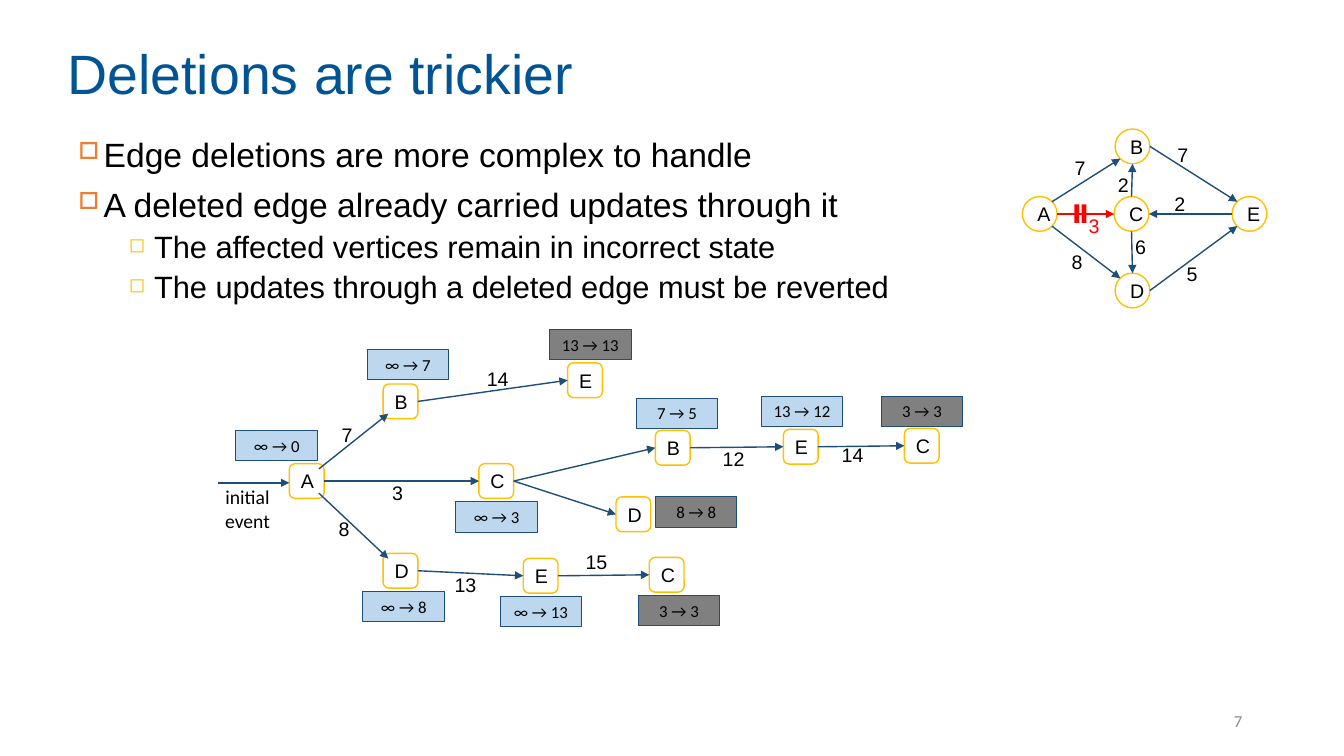
"""Build the slide on edge deletions with its update tree and example graph."""
from lxml.etree import SubElement
from pptx import Presentation
from pptx.dml.color import RGBColor
from pptx.enum.shapes import MSO_CONNECTOR, MSO_SHAPE
from pptx.enum.text import MSO_ANCHOR, MSO_AUTO_SIZE, PP_ALIGN
from pptx.oxml.ns import qn
from pptx.util import Inches, Pt

TITLE_BLUE = RGBColor(0x00, 0x54, 0x93)
NAVY = RGBColor(0x1F, 0x4E, 0x79)
PALE_BLUE = RGBColor(0xBD, 0xD7, 0xEE)
GOLD = RGBColor(0xFF, 0xC0, 0x00)
ORANGE = RGBColor(0xED, 0x7D, 0x31)
RED = RGBColor(0xFF, 0x00, 0x00)
GREY = RGBColor(0x80, 0x80, 0x80)
PAGE_GREY = RGBColor(0x8C, 0x8C, 0x8C)
BLACK = RGBColor(0x00, 0x00, 0x00)
WHITE = RGBColor(0xFF, 0xFF, 0xFF)

prs = Presentation()
prs.slide_width, prs.slide_height = Inches(13.33), Inches(7.5)
COL, ROW = prs.slide_width / 1333, prs.slide_height / 750
NODE = 34.5
s = prs.slides.add_slide(prs.slide_layouts[5])


def put(text, col, row, cols, rows, shape=None, sp=None, fill=None, line=None, weight=1,
        size=14, font="Arial", color=BLACK, align=PP_ALIGN.LEFT, anchor=MSO_ANCHOR.TOP):
    """Place text in a box, shape or placeholder on the grid."""
    box = [round(v) for v in (col * COL, row * ROW, cols * COL, rows * ROW)]
    if sp is not None:
        sp.left, sp.top, sp.width, sp.height = box
    elif shape is None:
        sp = s.shapes.add_textbox(*box)
    else:
        sp = s.shapes.add_shape(shape, *box)
        sp.shadow.inherit = False
        sp.fill.solid()
        sp.fill.fore_color.rgb = fill
        if line is None:
            sp.line.fill.background()
        else:
            sp.line.color.rgb = line
            sp.line.width = Pt(weight)
    tf = sp.text_frame
    tf.word_wrap = True
    tf.auto_size = MSO_AUTO_SIZE.NONE
    tf.vertical_anchor = anchor
    tf.text = text
    for p in tf.paragraphs:
        p.alignment = align
        for r in p.runs:
            r.font.size, r.font.name, r.font.color.rgb = Pt(size), font, color
    return sp


def arrow(x1, y1, x2, y2, color=NAVY):
    """Draw an arrow between two grid points."""
    c = s.shapes.add_connector(MSO_CONNECTOR.STRAIGHT, round(x1 * COL), round(y1 * ROW),
                               round(x2 * COL), round(y2 * ROW))
    c.line.color.rgb = color
    c.line.width = Pt(1)
    SubElement(c.line._get_or_add_ln(), qn("a:tailEnd"), type="triangle")
    SubElement(c._element.spPr, qn("a:effectLst"))


title = put("Deletions are trickier", 57, 44, 1214, 64, sp=s.shapes.title, size=39.6,
            color=TITLE_BLUE, anchor=MSO_ANCHOR.MIDDLE)
title.text_frame.paragraphs[0].line_spacing = 0.9

bullets = [
    (0, "Edge deletions are more complex to handle"),
    (0, "A deleted edge already carried updates through it"),
    (1, "The affected vertices remain in incorrect state"),
    (1, "The updates through a deleted edge must be reverted"),
]
levels = [(24, 10, 0.25, "□", ORANGE, 70), (22, 5, 0.75, "◻", GOLD, 65)]
body = put("\n".join(text for _, text in bullets), 68, 132, 888, 219)
for p, (level, _) in zip(body.text_frame.paragraphs, bullets):
    size, before, margin, mark, color, share = levels[level]
    p.level = level
    p.line_spacing = 0.9
    p.space_before = Pt(before)
    p.runs[0].font.size = Pt(size)
    pPr = p._p.get_or_add_pPr()
    pPr.set("marL", str(Inches(margin)))
    pPr.set("indent", str(Inches(-0.25)))
    SubElement(SubElement(pPr, qn("a:buClr")), qn("a:srgbClr"), val=str(color))
    SubElement(pPr, qn("a:buSzPct"), val=str(share * 1000))
    SubElement(pPr, qn("a:buChar"), char=mark)

tree = {
    "A": (287, 460), "B1": (380, 381), "C1": (475, 460), "D1": (380, 549),
    "E1": (519, 554), "E2": (563, 360), "B2": (650, 427), "D2": (611, 493),
    "C2": (644, 553), "E3": (777, 426), "C3": (897, 425),
}
graph = {"gA": (1014, 195), "gB": (1106, 128), "gC": (1105, 195),
         "gD": (1106, 271), "gE": (1222, 195)}
for nodes, shape in ((tree, MSO_SHAPE.ROUNDED_RECTANGLE), (graph, MSO_SHAPE.OVAL)):
    for name, (col, row) in nodes.items():
        put(name.strip("g123"), col, row, NODE, NODE, shape=shape, fill=WHITE, line=GOLD,
            align=PP_ALIGN.CENTER, anchor=MSO_ANCHOR.MIDDLE)

LEFT, RIGHT, TOP, BOTTOM = (0, 0.5), (1, 0.5), (0.5, 0), (0.5, 1)
TOP_LEFT, TOP_RIGHT = (0.15, 0.15), (0.85, 0.15)
LOW_LEFT, LOW_RIGHT = (0.15, 0.85), (0.85, 0.85)
edges = [
    ("A", TOP_RIGHT, "B1", LOW_LEFT), ("A", RIGHT, "C1", LEFT),
    ("A", LOW_RIGHT, "D1", TOP_LEFT), ("B1", RIGHT, "E2", LEFT),
    ("D1", RIGHT, "E1", LEFT), ("E1", RIGHT, "C2", LEFT),
    ("C1", RIGHT, "B2", LEFT), ("C1", RIGHT, "D2", LEFT),
    ("B2", RIGHT, "E3", LEFT), ("E3", RIGHT, "C3", LEFT),
    ("gA", TOP_RIGHT, "gB", LOW_LEFT), ("gA", RIGHT, "gC", LEFT),
    ("gA", LOW_RIGHT, "gD", TOP_LEFT), ("gB", RIGHT, "gE", TOP_LEFT),
    ("gD", RIGHT, "gE", LOW_LEFT), ("gC", TOP, "gB", BOTTOM),
    ("gC", BOTTOM, "gD", TOP), ("gE", LEFT, "gC", RIGHT),
]
places = {**tree, **graph}
for start, (u1, v1), end, (u2, v2) in edges:
    (x1, y1), (x2, y2) = places[start], places[end]
    arrow(x1 + u1 * NODE, y1 + v1 * NODE, x2 + u2 * NODE, y2 + v2 * NODE,
          color=RED if (start, end) == ("gA", "gC") else NAVY)
arrow(216, 479, 287, 479)

states = [
    ("∞", "0", 234, 427), ("∞", "7", 364, 347), ("∞", "8", 360, 587),
    ("∞", "3", 452, 498), ("∞", "13", 496, 592), ("13", "13", 545, 327),
    ("3", "3", 633, 591), ("8", "8", 650, 493), ("7", "5", 631, 395),
    ("13", "12", 755, 393), ("3", "3", 874, 393),
]
for old, new, col, row in states:
    put(f"{old} → {new}", col, row, 81, 30, shape=MSO_SHAPE.RECTANGLE,
        fill=GREY if old == new else PALE_BLUE, line=NAVY, weight=0.75, size=12,
        font="Calibri", align=PP_ALIGN.CENTER, anchor=MSO_ANCHOR.MIDDLE)

weights = [
    ("7", 329, 415), ("3", 379, 472), ("8", 326, 508), ("13", 441, 563),
    ("14", 473, 359), ("15", 571, 541), ("12", 707, 438), ("14", 825, 434),
    ("7", 1056, 150), ("2", 1099, 167), ("7", 1158, 137), ("5", 1167, 255),
    ("2", 1155, 186), ("8", 1053, 243), ("6", 1116, 228),
]
for text, col, row in weights:
    put(text, col, row, 10 + 17 * len(text), 34)
put("3", 1070, 207, 27, 34, color=RED)
put("initial event", 207, 476, 77, 57, font="Calibri", align=PP_ALIGN.CENTER,
    anchor=MSO_ANCHOR.MIDDLE)

cut = put("", 1059, 202, 25, 20, shape=MSO_SHAPE.MATH_EQUAL, fill=RED)
cut.rotation = 90
put("7", 942, 695, 300, 40, size=12, font="Calibri", color=PAGE_GREY,
    align=PP_ALIGN.RIGHT, anchor=MSO_ANCHOR.MIDDLE)

prs.save("out.pptx")
